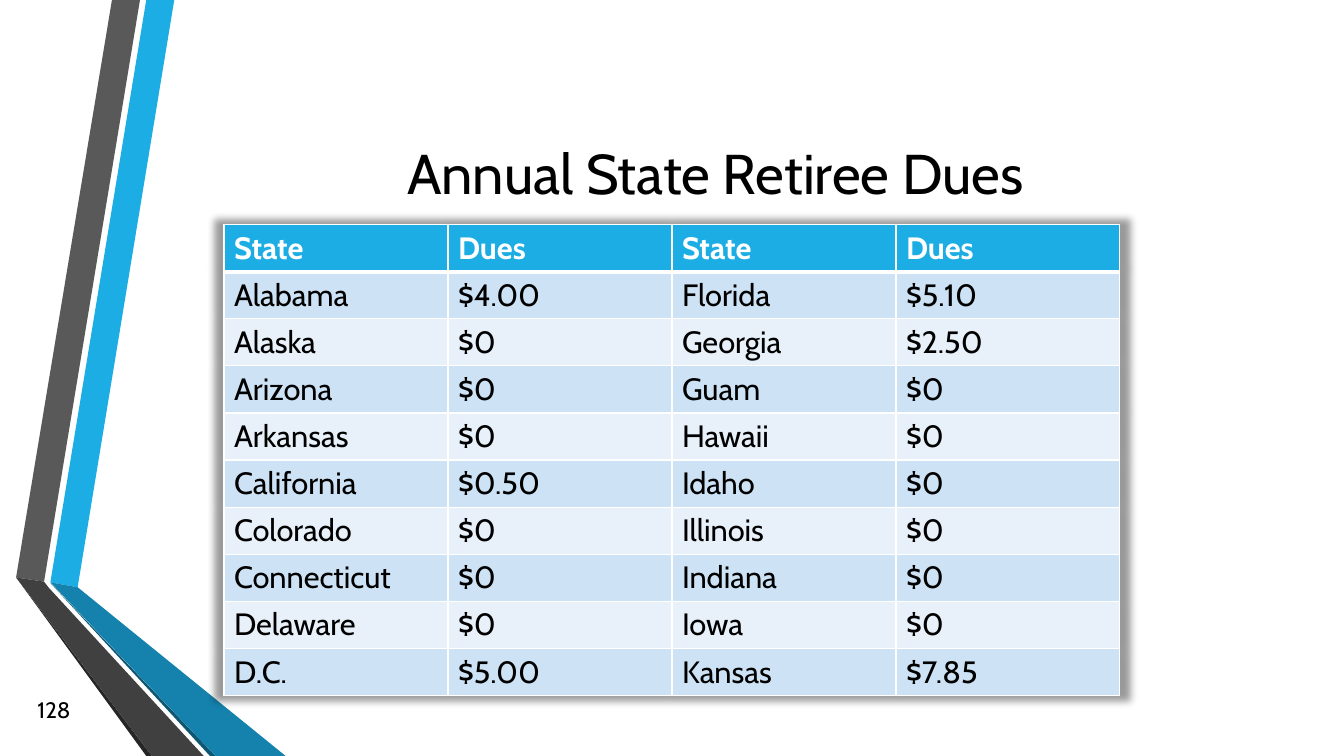
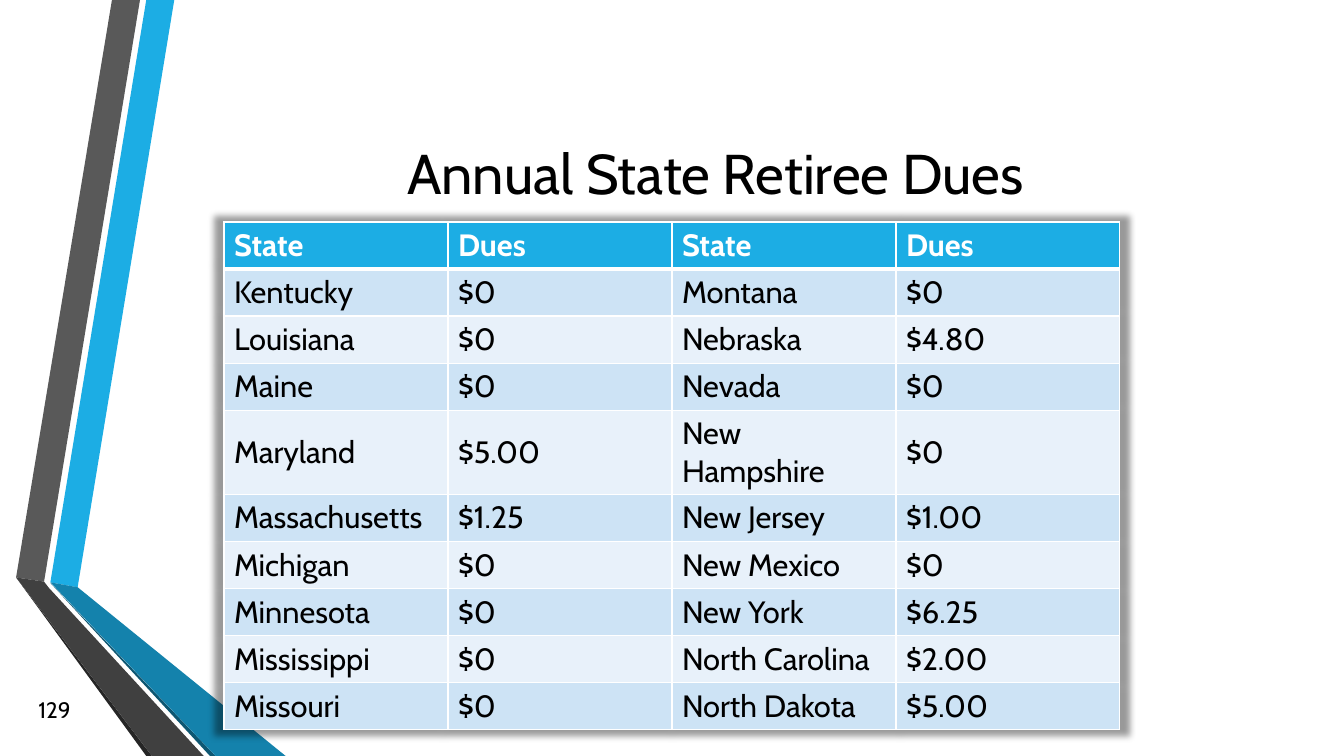
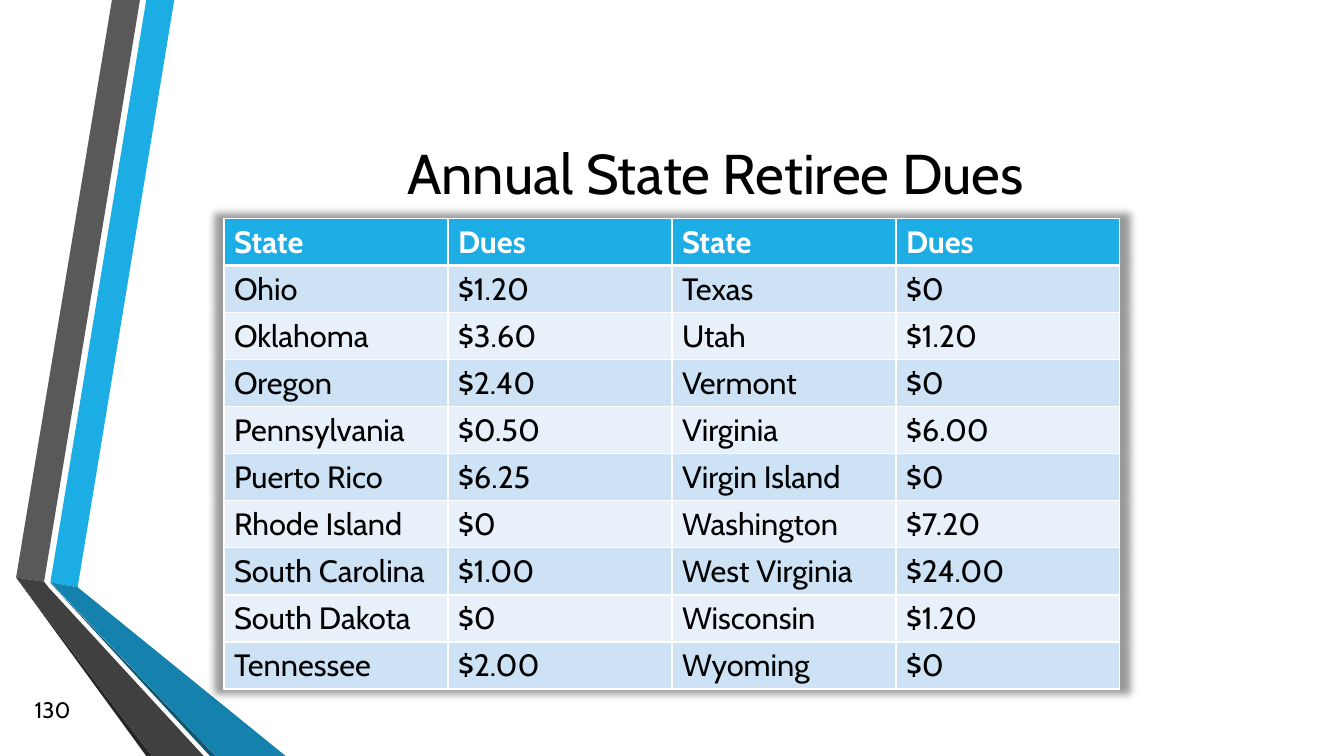
"""Build three slides that list annual state retiree dues."""
from dataclasses import dataclass
from typing import NamedTuple

from lxml import etree
from pptx import Presentation
from pptx.dml.color import RGBColor
from pptx.enum.text import MSO_ANCHOR, PP_ALIGN
from pptx.oxml.ns import qn
from pptx.util import Pt

LEFT, CENTER, RIGHT = PP_ALIGN.LEFT, PP_ALIGN.CENTER, PP_ALIGN.RIGHT
MIDDLE = MSO_ANCHOR.MIDDLE


@dataclass(frozen=True)
class Theme:
    font: str = "Cabin"
    title_size: int = 40
    table_size: int = 22
    number_size: int = 16
    text: str = "000000"
    white: str = "FFFFFF"
    accent: str = "1CADE4"
    accent_dark: str = "1482AC"
    accent_deep: str = "0E5772"
    gray: str = "595959"
    gray_dark: str = "404040"
    gray_deep: str = "262626"
    row_odd: str = "CDE3F5"
    row_even: str = "E8F1FA"


class Band(NamedTuple):
    color: str
    points: list[tuple[float, float]]


class DuesPage(NamedTuple):
    number: int
    top: float
    rows: list[tuple[str, str, str, str]]


THEME = Theme()
TITLE = "Annual State Retiree Dues"
HEADER = ("State", "Dues", "State", "Dues")
TABLE_LEFT, COL_WIDTH, ROW_HEIGHT = 160, 160, 29.5
RULE, HEADER_RULE = 1, 3

BANDS = [
    Band(THEME.accent, [(36, 416), (55.5, 419.5), (124.5, 0), (104.5, 0)]),
    Band(THEME.gray, [(100, 0), (80, 0), (11.5, 412.5), (31.5, 415.5)]),
    Band(THEME.gray_deep, [(11.5, 412.5), (104.5, 540), (108.5, 540)]),
    Band(THEME.accent_deep, [(36, 416.5), (150, 540), (154, 540)]),
    Band(THEME.accent_dark, [(36, 416), (154, 540), (204, 540), (55.5, 419.5)]),
    Band(THEME.gray_dark, [(145.5, 540), (34.5, 419.5), (31.5, 415.5),
                           (11.5, 412.5), (108.5, 540)]),
]

PAGES = [
    DuesPage(128, 160.5, [
        ("Alabama", "$4.00", "Florida", "$5.10"),
        ("Alaska", "$0", "Georgia", "$2.50"),
        ("Arizona", "$0", "Guam", "$0"),
        ("Arkansas", "$0", "Hawaii", "$0"),
        ("California", "$0.50", "Idaho", "$0"),
        ("Colorado", "$0", "Illinois", "$0"),
        ("Connecticut", "$0", "Indiana", "$0"),
        ("Delaware", "$0", "Iowa", "$0"),
        ("D.C.", "$5.00", "Kansas", "$7.85"),
    ]),
    DuesPage(129, 158.5, [
        ("Kentucky", "$0", "Montana", "$0"),
        ("Louisiana", "$0", "Nebraska", "$4.80"),
        ("Maine", "$0", "Nevada", "$0"),
        ("Maryland", "$5.00", "New Hampshire", "$0"),
        ("Massachusetts", "$1.25", "New Jersey", "$1.00"),
        ("Michigan", "$0", "New Mexico", "$0"),
        ("Minnesota", "$0", "New York", "$6.25"),
        ("Mississippi", "$0", "North Carolina", "$2.00"),
        ("Missouri", "$0", "North Dakota", "$5.00"),
    ]),
    DuesPage(130, 156, [
        ("Ohio", "$1.20", "Texas", "$0"),
        ("Oklahoma", "$3.60", "Utah", "$1.20"),
        ("Oregon", "$2.40", "Vermont", "$0"),
        ("Pennsylvania", "$0.50", "Virginia", "$6.00"),
        ("Puerto Rico", "$6.25", "Virgin Island", "$0"),
        ("Rhode Island", "$0", "Washington", "$7.20"),
        ("South Carolina", "$1.00", "West Virginia", "$24.00"),
        ("South Dakota", "$0", "Wisconsin", "$1.20"),
        ("Tennessee", "$2.00", "Wyoming", "$0"),
    ]),
]


def write(tf, text: str, *, size: float, color: str = THEME.text,
          bold: bool = False, align=LEFT) -> None:
    p = tf.paragraphs[0]
    p.alignment = align
    r = p.add_run()
    r.text = text
    r.font.name = THEME.font
    r.font.size = Pt(size)
    r.font.bold = bold
    r.font.color.rgb = RGBColor.from_string(color)


def add_text(s, text: str, x: float, y: float, w: float, h: float, **fmt) -> None:
    tf = s.shapes.add_textbox(Pt(x), Pt(y), Pt(w), Pt(h)).text_frame
    tf.word_wrap = True
    tf.vertical_anchor = MIDDLE
    write(tf, text, **fmt)


def add_band(s, band: Band) -> None:
    start, *rest = [(Pt(x), Pt(y)) for x, y in band.points]
    builder = s.shapes.build_freeform(*start, scale=1.0)
    builder.add_line_segments(rest, close=True)
    sp = builder.convert_to_shape()
    sp.shadow.inherit = False
    sp.fill.solid()
    sp.fill.fore_color.rgb = RGBColor.from_string(band.color)
    sp.line.fill.background()


def add_color(parent, color: str):
    return etree.SubElement(parent, qn("a:srgbClr"), val=color)


def set_borders(cell, top: float, bottom: float) -> None:
    tc_pr = cell._tc.get_or_add_tcPr()
    for side, width in (("L", RULE), ("R", RULE), ("T", top), ("B", bottom)):
        ln = etree.SubElement(tc_pr, qn(f"a:ln{side}"), w=str(Pt(width)))
        add_color(etree.SubElement(ln, qn("a:solidFill")), THEME.white)


def add_table_shadow(table) -> None:
    effects = etree.Element(qn("a:effectLst"))
    shadow = etree.SubElement(effects, qn("a:outerShdw"), blurRad=str(Pt(5)),
                              sx="102000", sy="102000", algn="ctr", rotWithShape="0")
    etree.SubElement(add_color(shadow, THEME.text), qn("a:alpha"), val="40000")
    table._tbl.tblPr.insert(0, effects)


def add_dues_table(s, page: DuesPage) -> None:
    rows = [HEADER, *page.rows]
    table = s.shapes.add_table(
        len(rows), len(HEADER), Pt(TABLE_LEFT), Pt(page.top),
        Pt(COL_WIDTH * len(HEADER)), Pt(ROW_HEIGHT * len(rows))).table
    add_table_shadow(table)
    for i, row in enumerate(rows):
        is_header = i == 0
        fill = THEME.accent if is_header else THEME.row_odd if i % 2 else THEME.row_even
        for j, text in enumerate(row):
            cell = table.cell(i, j)
            cell.vertical_anchor = MIDDLE
            set_borders(cell, top=HEADER_RULE if i == 1 else RULE,
                        bottom=HEADER_RULE if is_header else RULE)
            cell.fill.solid()
            cell.fill.fore_color.rgb = RGBColor.from_string(fill)
            write(cell.text_frame, text, size=THEME.table_size, bold=is_header,
                  color=THEME.white if is_header else THEME.text)


def add_page(prs, page: DuesPage) -> None:
    s = prs.slides.add_slide(prs.slide_layouts[6])
    for band in BANDS:
        add_band(s, band)
    add_text(s, TITLE, 116.5, 54, 789, 138, size=THEME.title_size, align=CENTER)
    add_dues_table(s, page)
    add_text(s, str(page.number), 14.5, 492, 43, 29, size=THEME.number_size, align=RIGHT)


def main() -> None:
    prs = Presentation()
    prs.slide_width, prs.slide_height = Pt(960), Pt(540)
    for page in PAGES:
        add_page(prs, page)
    prs.save("out.pptx")


if __name__ == "__main__":
    main()
